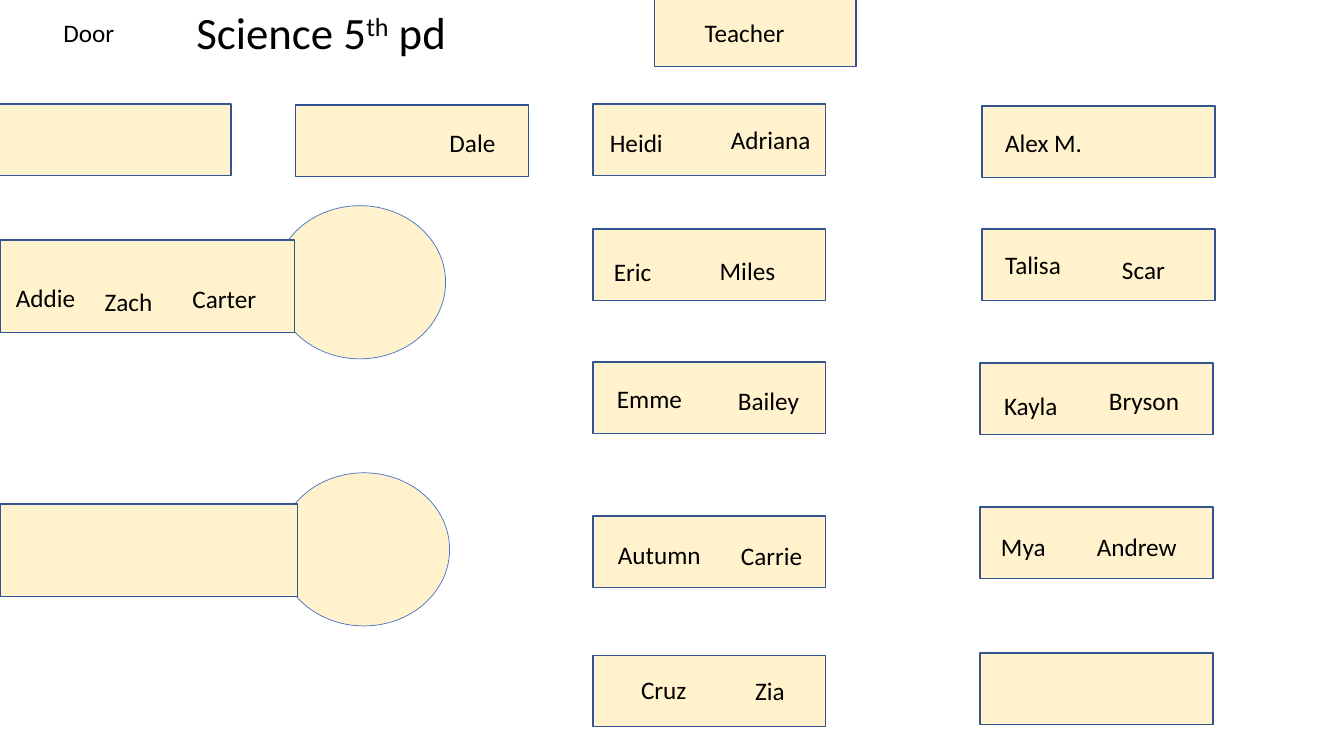
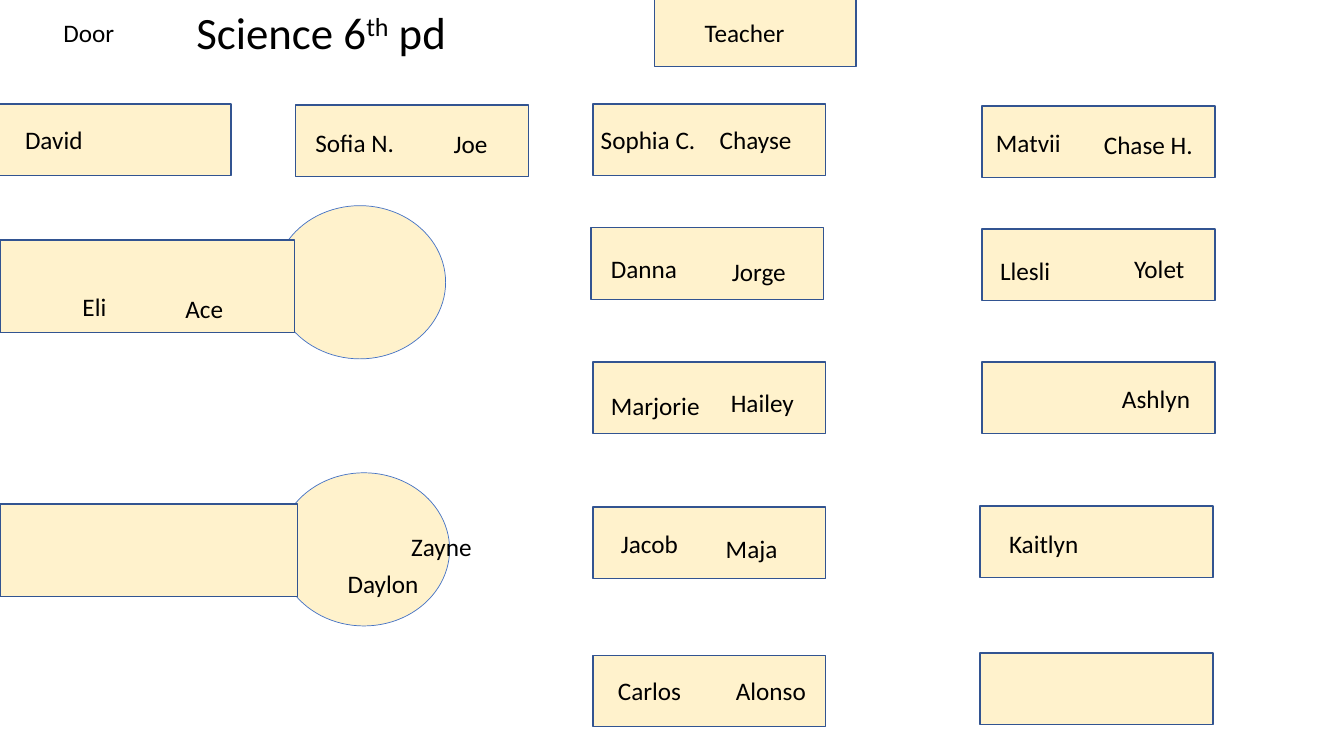
from pptx import Presentation
from pptx.dml.color import RGBColor
from pptx.enum.shapes import MSO_SHAPE as Kind
from pptx.enum.text import MSO_ANCHOR as Anchor, MSO_AUTO_SIZE as Fit, PP_ALIGN as Align
from pptx.util import Inches as In, Pt

CREAM, NAVY, BLUE, BLACK = "FFF2CC", "325491", "4472C4", "000000"
FONT = "Calibri"
COLS = (-0.02, 2.93, 5.88, 9.72)
ROWS = (1.03, 2.27, 3.59, 5.03, 6.5)
DESK = (2.31, 0.71)

BASE = {(c, r): (0, 0) for c in (2, 3) for r in range(5)}
BASE |= {
    (0, 0): (0, 0), (1, 0): (0, 0.01),
    (3, 0): (0.02, 0.02), (3, 1): (0.02, 0), (3, 2): (0, 0.01), (3, 4): (0, -0.02),
}

PLANS = [
    ("5", {(2, 3): (0, 0.09)}, {
        (1, 0): [("Dale", 1.43, 0.18)],
        (2, 0): [("Heidi", 0.07, 0.18), ("Adriana", 1.27, 0.15)],
        (3, 0): [("Alex M.", 0.15, 0.18)],
        (0, 1): [("Addie", 0.08, 0.48), ("Zach", 0.96, 0.52), ("Carter", 1.83, 0.49)],
        (2, 1): [("Eric", 0.11, 0.22), ("Miles", 1.16, 0.21)],
        (3, 1): [("Talisa", 0.15, 0.15), ("Scar", 1.31, 0.2)],
        (2, 2): [("Emme", 0.14, 0.16), ("Bailey", 1.34, 0.18)],
        (3, 2): [("Kayla", 0.14, 0.23), ("Bryson", 1.18, 0.18)],
        (2, 3): [("Autumn", 0.15, 0.27), ("Carrie", 1.37, 0.28)],
        (3, 3): [("Mya", 0.11, 0.19), ("Andrew", 1.06, 0.19)],
        (2, 4): [("Cruz", 0.38, 0.14), ("Zia", 1.51, 0.15)],
    }),
    ("6", {(2, 1): (-0.02, -0.01), (3, 2): (0.02, 0), (3, 3): (0, -0.01)}, {
        (0, 0): [("David", 0.17, 0.15)],
        (1, 0): [("Sofia N.", 0.1, 0.18), ("Joe", 1.47, 0.19)],
        (2, 0): [("Sophia C.", -0.02, 0.15), ("Chayse", 1.16, 0.15)],
        (3, 0): [("Matvii", 0.06, 0.18), ("Chase H.", 1.13, 0.2)],
        (0, 1): [("Eli", 0.74, 0.57), ("Ace", 1.76, 0.59)],
        (2, 1): [("Danna", 0.08, 0.19), ("Jorge", 1.28, 0.22)],
        (3, 1): [("Llesli", 0.1, 0.21), ("Yolet", 1.43, 0.19)],
        (2, 2): [("Marjorie", 0.08, 0.23), ("Hailey", 1.27, 0.2)],
        (3, 2): [("Ashlyn", 1.31, 0.16)],
        (1, 3): [("Daylon", 0.42, 0.56), ("Zayne", 1.05, 0.19)],
        (2, 3): [("Jacob", 0.18, 0.16), ("Maja", 1.22, 0.21)],
        (3, 3): [("Kaitlyn", 0.19, 0.16)],
        (2, 4): [("Carlos", 0.15, 0.15), ("Alonso", 1.32, 0.15)],
    }),
]


def write(box, text, size=18, align=Align.LEFT, up=False):
    frame = box.text_frame
    frame.word_wrap = True
    frame.auto_size = Fit.NONE
    frame.vertical_anchor = Anchor.TOP
    para = frame.paragraphs[0]
    para.alignment = align
    run = para.add_run()
    run.text = text
    run.font.name = FONT
    run.font.size = Pt(size)
    run.font.color.rgb = RGBColor.from_string(BLACK)
    if up:
        run._r.get_or_add_rPr().set("baseline", "30000")


def draw(slide, kind, x, y, w, h, line=NAVY, width=1):
    shape = slide.shapes.add_shape(kind, In(x), In(y), In(w), In(h))
    shape.shadow.inherit = False
    shape.fill.solid()
    shape.fill.fore_color.rgb = RGBColor.from_string(CREAM)
    shape.line.color.rgb = RGBColor.from_string(line)
    shape.line.width = Pt(width)


deck = Presentation()
deck.slide_width, deck.slide_height = In(13.33), In(7.5)

for hour, moves, seats in PLANS:
    slide = deck.slides.add_slide(deck.slide_layouts[5])
    title = slide.shapes.title
    title.left, title.top, title.width, title.height = In(1.59), In(0), In(3.19), In(0.64)
    for text, up in ((f"Science {hour}", False), ("th", True), (" pd", False)):
        write(title, text, size=32, align=Align.CENTER, up=up)

    for x, y, wide, top in ((2.76, 4.69, 2.95, 5), (2.72, 2.04, 2.92, 2.38)):
        draw(slide, Kind.OVAL, x, y, 1.7, 1.52, line=BLUE, width=0.5)
        draw(slide, Kind.RECTANGLE, 0, top, wide, 0.92)

    draw(slide, Kind.RECTANGLE, 6.49, -0.02, 2, 0.68)
    for text, x, wide, align in (("Door", 0.53, 0.9, Align.LEFT), ("Teacher", 6.67, 1.43, Align.CENTER)):
        write(slide.shapes.add_textbox(In(x), In(0.12), In(wide), In(0.4)), text, align=align)

    for (col, row), (dx, dy) in (BASE | moves).items():
        draw(slide, Kind.RECTANGLE, COLS[col] + dx, ROWS[row] + dy, *DESK)

    for (col, row), names in seats.items():
        for name, dx, dy in names:
            box = slide.shapes.add_textbox(In(COLS[col] + dx), In(ROWS[row] + dy), In(1.3), In(0.4))
            write(box, name)

deck.save("out.pptx")
